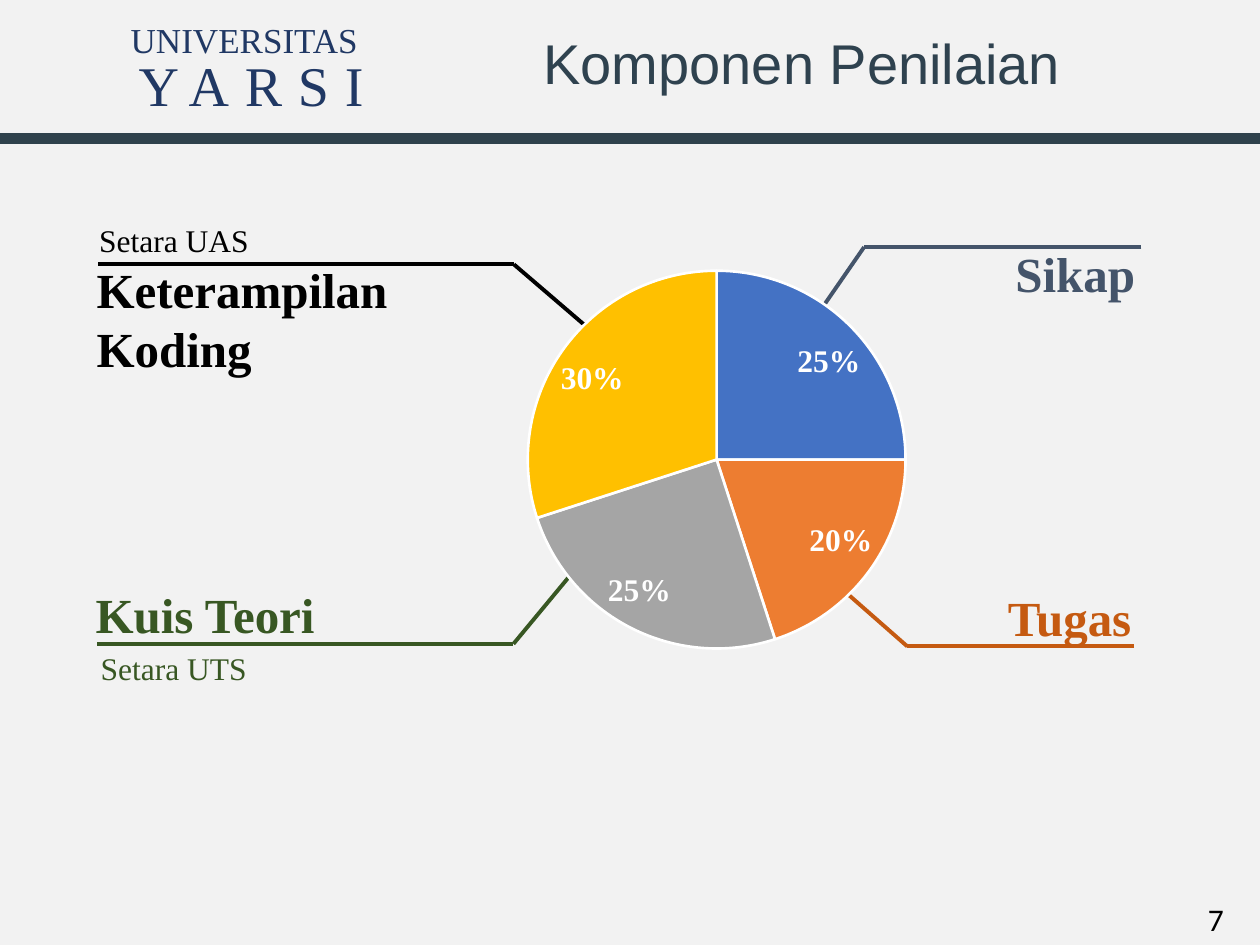
"""Build the grading components slide with a labelled pie chart."""
from itertools import pairwise

from lxml.etree import SubElement
from pptx import Presentation
from pptx.chart.data import CategoryChartData
from pptx.dml.color import RGBColor
from pptx.enum.chart import XL_CHART_TYPE, XL_LABEL_POSITION
from pptx.enum.shapes import MSO_CONNECTOR
from pptx.enum.text import MSO_ANCHOR, PP_ALIGN
from pptx.oxml import parse_xml
from pptx.oxml.ns import nsdecls, qn
from pptx.util import Cm, Pt

SERIF = "Times New Roman"
NAVY, SLATE, ORANGE, GREEN, BLACK = "203864", "44546A", "C55A11", "385723", "000000"


def set_color(target, color):
    target.rgb = RGBColor.from_string(color)


def add_line(page, start, end, color, width):
    line = page.shapes.add_connector(
        MSO_CONNECTOR.STRAIGHT, *(Cm(value) for value in start + end))
    set_color(line.line.color, color)
    line.line.width = Pt(width)
    SubElement(line._element.spPr, qn("a:effectLst"))


deck = Presentation()
deck.slide_width, deck.slide_height = Cm(25.4), Cm(19.05)
page = deck.slides.add_slide(deck.slide_layouts[5])
page.background.fill.solid()
set_color(page.background.fill.fore_color, "F2F2F2")

add_line(page, (0, 2.79), (25.4, 2.79), "2F424C", 6)

title = page.shapes.title
title.left, title.top, title.width, title.height = Cm(8.23), Cm(0.58), Cm(15.88), Cm(1.52)
title.text_frame.text = "Komponen Penilaian"
title.text_frame.vertical_anchor = MSO_ANCHOR.MIDDLE
paragraph = title.text_frame.paragraphs[0]
paragraph.alignment = PP_ALIGN.CENTER
paragraph.line_spacing = 0.9
span = paragraph.runs[0]
span.font.name, span.font.size = "Arial", Pt(32)
set_color(span.font.color, "2F424F")

labels = [
    ("7", 24.1, 18.01, 1.27, 1.02, 18, "Calibri", BLACK, False, False, None),
    ("UNIVERSITAS", 2.36, 0.25, 5.13, 1.12, 20, SERIF, NAVY, False, False, PP_ALIGN.CENTER),
    ("YARSI", 2.36, 0.89, 5.41, 1.63, 32, SERIF, NAVY, False, False, PP_ALIGN.CENTER),
    ("Sikap", 20.22, 4.78, 2.95, 1.45, 28, SERIF, SLATE, True, False, None),
    ("Tugas", 20.07, 11.71, 3.02, 1.45, 28, SERIF, ORANGE, True, False, None),
    ("Kuis Teori", 1.68, 11.66, 4.98, 1.45, 28, SERIF, GREEN, True, False, None),
    ("Setara UTS", 1.78, 12.95, 8.56, 1.02, 18, SERIF, GREEN, False, True, None),
    ("Keterampilan\vKoding", 1.7, 5.11, 6.68, 2.64, 28, SERIF, BLACK, True, False, None),
    ("Setara UAS", 1.75, 4.34, 8.59, 1.02, 18, SERIF, BLACK, False, True, None),
]
for text, left, top, width, height, size, font, color, bold, wrap, alignment in labels:
    box = page.shapes.add_textbox(Cm(left), Cm(top), Cm(width), Cm(height))
    box.text_frame.word_wrap = wrap
    box.text_frame.text = text
    paragraph = box.text_frame.paragraphs[0]
    paragraph.alignment = alignment
    for span in paragraph.runs:
        span.font.name, span.font.size, span.font.bold = font, Pt(size), bold
        set_color(span.font.color, color)
        if text == "YARSI":
            span.font._element.set("spc", "900")

leaders = [
    (SLATE, [(23.01, 4.98), (17.42, 4.98), (16.28, 6.63)]),
    (ORANGE, [(22.86, 13.03), (18.29, 13.03), (16.81, 11.73)]),
    (BLACK, [(1.98, 5.33), (10.36, 5.33), (11.84, 6.6)]),
    (GREEN, [(1.96, 12.98), (10.35, 12.98), (11.51, 11.58)]),
]
for color, points in leaders:
    for start, end in pairwise(points):
        add_line(page, start, end, color, 2.25)

weights = CategoryChartData(number_format="0%")
weights.categories = ["1", "2", "3", "4"]
weights.add_series("Series 1", [0.25, 0.2, 0.25, 0.3])
chart = page.shapes.add_chart(
    XL_CHART_TYPE.PIE, Cm(10.06), Cm(5.21), Cm(8.69), Cm(8.28), weights).chart
chart.has_legend = chart.has_title = False
chart.font.name, chart.font.size = "Calibri", Pt(10)
set_color(chart.font.color, BLACK)

plot = chart.plots[0]
plot.vary_by_categories = True
for index, color in enumerate(["4472C4", "ED7D31", "A5A5A5", "FFC000"]):
    slice_format = plot.series[0].points[index].format
    slice_format.fill.solid()
    set_color(slice_format.fill.fore_color, color)
    set_color(slice_format.line.color, "FFFFFF")
    slice_format.line.width = Pt(1.5)

values = plot.series[0].data_labels
values.show_value = True
values.number_format, values.number_format_is_linked = "0%", False
values.position = XL_LABEL_POSITION.BEST_FIT
values.font.name, values.font.size, values.font.bold = SERIF, Pt(18), True
set_color(values.font.color, "FFFFFF")

plot_area = chart._chartSpace.chart.plotArea
for layout in plot_area.findall(qn("c:layout")):
    plot_area.remove(layout)
plot_area.insert(0, parse_xml(
    f'<c:layout {nsdecls("c")}><c:manualLayout><c:layoutTarget val="inner"/>'
    '<c:xMode val="edge"/><c:yMode val="edge"/><c:x val="0.06"/><c:y val="0.03"/>'
    '<c:w val="0.89"/><c:h val="0.92"/></c:manualLayout></c:layout>'))

deck.save("out.pptx")
